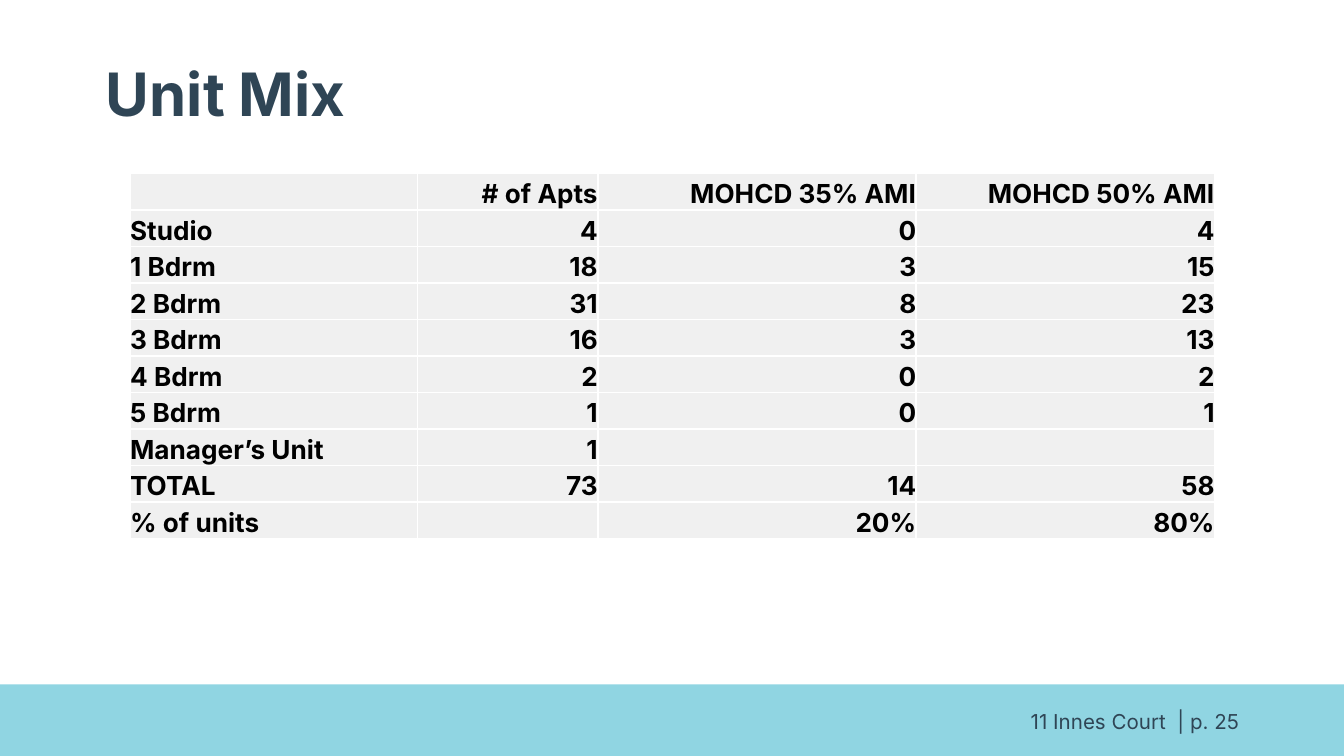
from dataclasses import dataclass

import pptx
import pptx.dml.color
import pptx.enum.shapes
import pptx.enum.text
import pptx.oxml
import pptx.oxml.ns
import pptx.util
from pptx.enum.text import MSO_ANCHOR, PP_ALIGN

# The slide is a grid of 100 columns by 56.25 rows.
COLUMNS, ROWS = 100, 56.25
UNIT = pptx.util.Inches(0.1)


@dataclass(frozen=True)
class Theme:
    font: str = "Inter"
    band: str = "90D5E2"
    heading: str = "2F4555"
    text: str = "000000"
    cell: str = "F0F0F0"
    border: str = "FFFFFF"
    border_width: float = 1
    title_size: float = 32
    table_size: float = 14
    footer_size: float = 11


@dataclass(frozen=True)
class Area:
    column: float
    row: float
    columns: float
    rows: float

    def lengths(self) -> tuple[int, ...]:
        return tuple(grid(n) for n in (self.column, self.row, self.columns, self.rows))


@dataclass(frozen=True)
class UnitRow:
    label: str
    apartments: str = ""
    ami_35: str = ""
    ami_50: str = ""

    def values(self) -> tuple[str, ...]:
        return self.label, self.apartments, self.ami_35, self.ami_50


THEME = Theme()
BAND_TOP = 50.92
BAND = Area(0, BAND_TOP, COLUMNS, ROWS - BAND_TOP)
TITLE = Area(6.88, 2, 86.25, 10.87)
FOOTER = Area(3.12, 52.15, 90.1, 3)
TABLE = Area(9.68, 12.9, 80.7, 27.2)
TABLE_COLUMNS = (21.4, 13.4, 23.7, 22.2)
UNIT_MIX = (
    UnitRow("", "# of Apts", "MOHCD 35% AMI", " MOHCD 50% AMI"),
    UnitRow("Studio", "4", "0", "4"),
    UnitRow("1 Bdrm", "18", "3", "15"),
    UnitRow("2 Bdrm", "31", "8", "23"),
    UnitRow("3 Bdrm", "16", "3", "13"),
    UnitRow("4 Bdrm", "2", "0", "2"),
    UnitRow("5 Bdrm", "1", "0", "1"),
    UnitRow("Manager’s Unit", "1"),
    UnitRow("TOTAL", "73", "14", "58"),
    UnitRow("% of units", "", "20%", "80%"),
)


def grid(units: float) -> int:
    return round(units * UNIT)


def rgb(color: str) -> pptx.dml.color.RGBColor:
    return pptx.dml.color.RGBColor.from_string(color)


def write(text_frame, text: str, size: float, color: str, bold: bool, align) -> None:
    text_frame.text = text
    paragraph = text_frame.paragraphs[0]
    paragraph.alignment = align
    for run in paragraph.runs:
        run.font.name = THEME.font
        run.font.size = pptx.util.Pt(size)
        run.font.bold = bold
        run.font.color.rgb = rgb(color)


def draw_band(slide) -> None:
    band = slide.shapes.add_shape(
        pptx.enum.shapes.MSO_SHAPE.RECTANGLE, *BAND.lengths())
    band.shadow.inherit = False
    band.fill.solid()
    band.fill.fore_color.rgb = rgb(THEME.band)
    band.line.fill.background()


def draw_title(slide) -> None:
    title = slide.shapes.title
    title.left, title.top, title.width, title.height = TITLE.lengths()
    text_frame = title.text_frame
    write(text_frame, "Unit Mix", THEME.title_size, THEME.heading, True, PP_ALIGN.LEFT)
    text_frame.vertical_anchor = MSO_ANCHOR.MIDDLE
    text_frame.margin_bottom = grid(0.9)
    text_frame.paragraphs[0].line_spacing = 0.9


def draw_footer(slide) -> None:
    text_frame = slide.shapes.add_textbox(*FOOTER.lengths()).text_frame
    text_frame.word_wrap = True
    text_frame.vertical_anchor = MSO_ANCHOR.MIDDLE
    write(text_frame, "11 Innes Court  | p. 25", THEME.footer_size,
          THEME.heading, False, PP_ALIGN.RIGHT)


def set_borders(cell) -> None:
    properties = cell._tc.get_or_add_tcPr()
    for position, side in enumerate(("lnL", "lnR", "lnT", "lnB")):
        border = pptx.oxml.parse_xml(
            f'<a:{side} {pptx.oxml.ns.nsdecls("a")} '
            f'w="{pptx.util.Pt(THEME.border_width)}"><a:solidFill>'
            f'<a:srgbClr val="{THEME.border}"/></a:solidFill></a:{side}>')
        properties.insert(position, border)


def fill_cell(cell, text: str, align) -> None:
    cell.margin_left = cell.margin_right = cell.margin_top = cell.margin_bottom = 0
    cell.vertical_anchor = MSO_ANCHOR.BOTTOM
    cell.fill.solid()
    cell.fill.fore_color.rgb = rgb(THEME.cell)
    set_borders(cell)
    write(cell.text_frame, text, THEME.table_size, THEME.text, True, align)
    if not text:
        # Keeps an empty cell from stretching its row.
        cell.text_frame.paragraphs[0]._p.append(pptx.oxml.parse_xml(
            f'<a:endParaRPr {pptx.oxml.ns.nsdecls("a")} '
            f'sz="{round(THEME.table_size * 100)}"/>'))


def draw_table(slide) -> None:
    table = slide.shapes.add_table(
        len(UNIT_MIX), len(TABLE_COLUMNS), *TABLE.lengths()).table
    for column, width in zip(table.columns, TABLE_COLUMNS):
        column.width = grid(width)
    for row, unit_row in zip(table.rows, UNIT_MIX):
        row.height = grid(TABLE.rows / len(UNIT_MIX))
        for index, (cell, text) in enumerate(zip(row.cells, unit_row.values())):
            fill_cell(cell, text, PP_ALIGN.RIGHT if index else PP_ALIGN.LEFT)


def main() -> None:
    presentation = pptx.Presentation()
    presentation.slide_width = grid(COLUMNS)
    presentation.slide_height = grid(ROWS)
    title_only = presentation.slide_layouts.get_by_name("Title Only")
    slide = presentation.slides.add_slide(title_only)
    draw_band(slide)
    draw_title(slide)
    draw_footer(slide)
    draw_table(slide)
    presentation.save("out.pptx")


if __name__ == "__main__":
    main()
